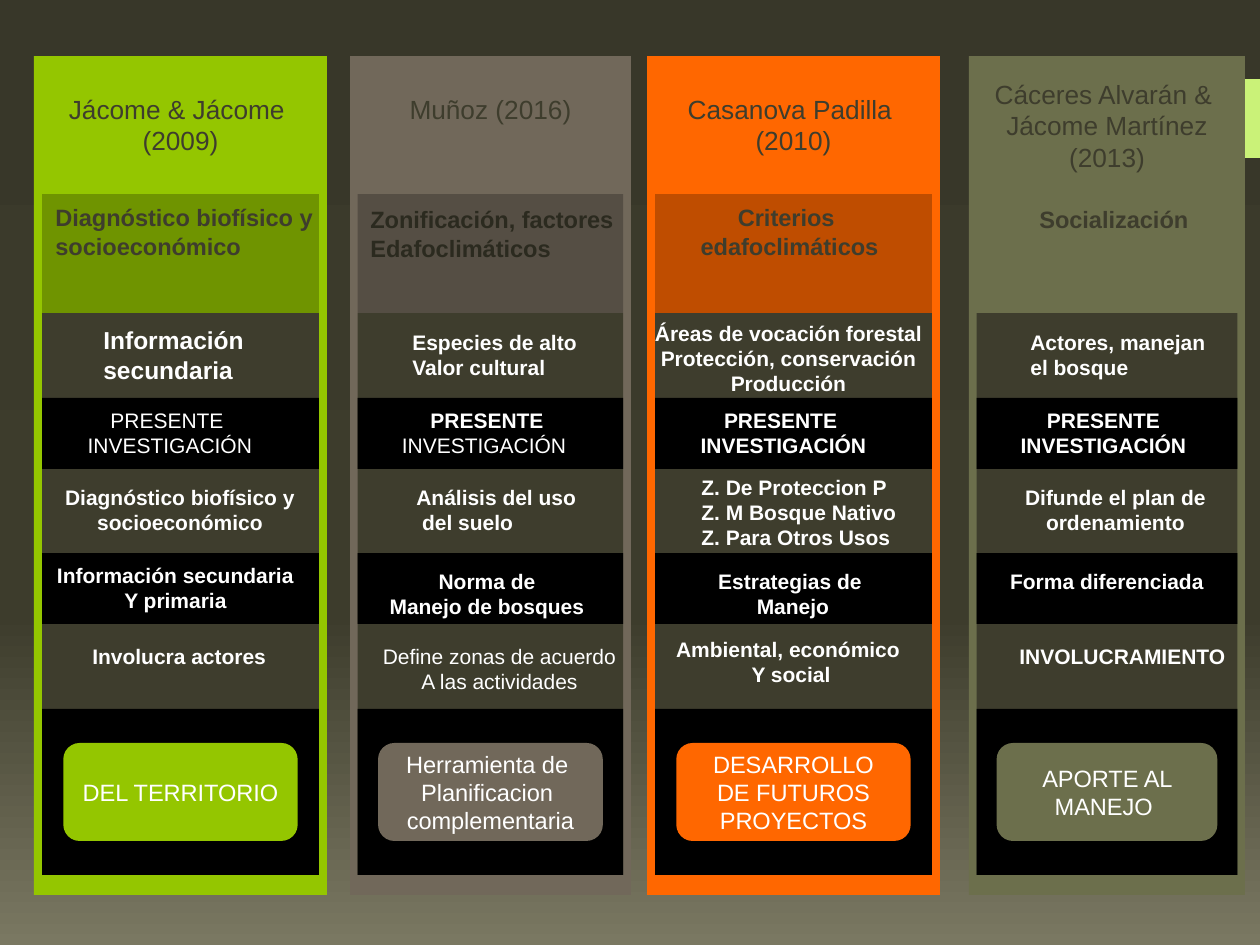
from copy import deepcopy
from dataclasses import dataclass

from pptx import Presentation
from pptx.dml.color import RGBColor
from pptx.enum.shapes import MSO_SHAPE
from pptx.enum.text import MSO_ANCHOR, MSO_AUTO_SIZE, PP_ALIGN
from pptx.util import Emu, Pt

PX_PER_INCH = 126
LEFT, CENTER = PP_ALIGN.LEFT, PP_ALIGN.CENTER


@dataclass(frozen=True)
class Theme:
    font: str = "Arial"
    background: tuple = ((0, "383729"), (0.65, "3D3C2C"), (1, "7A7862"))
    tab: str = "CAF278"
    body: str = "3E3D2D"
    band: str = "000000"
    dark_text: str = "3E3D2D"
    darker_text: str = "2B2A1F"
    light_text: str = "FFFFFF"
    author_size: float = 15
    topic_size: float = 13.5
    lead_size: float = 14
    row_size: float = 12


THEME = Theme()


@dataclass(frozen=True)
class Caption:
    left: int
    top: int
    width: int
    lines: tuple
    align: PP_ALIGN = CENTER
    size: float = THEME.row_size
    color: str = THEME.light_text
    plain: tuple = ()  # indexes of the lines that are not bold


@dataclass(frozen=True)
class Column:
    left: int
    width: int
    color: str
    topic_color: str
    button: tuple
    captions: tuple


def author(left, top, width, *lines):
    return Caption(left, top, width, lines, size=THEME.author_size,
                   color=THEME.dark_text, plain=tuple(range(len(lines))))


def topic(left, top, width, *lines, align=LEFT, color=THEME.dark_text):
    return Caption(left, top, width, lines, align, THEME.topic_size, color)


COLUMNS = (
    Column(34, 293, "94C600", "6F9400", ("DEL TERRITORIO",), (
        author(55, 87, 251, "Jácome & Jácome ", "(2009)"),
        topic(43, 197, 294, "Diagnóstico biofísico y", "socioeconómico"),
        Caption(91, 319, 174, ("Información", "secundaria"), LEFT, THEME.lead_size),
        Caption(74, 401, 192, ("PRESENTE ", "INVESTIGACIÓN"), plain=(0, 1)),
        Caption(51, 478, 258, ("Diagnóstico biofísico y", "socioeconómico")),
        Caption(43, 556, 265, ("Información secundaria", "Y primaria")),
        Caption(80, 637, 200, ("Involucra actores",), LEFT),
    )),
    Column(350, 281, "71685A", "554E44",
           ("Herramienta de ", "Planificacion ", "complementaria"), (
        author(396, 87, 189, "Muñoz (2016)"),
        topic(358, 199, 270, "Zonificación, factores", "Edafoclimáticos",
              color=THEME.darker_text),
        Caption(400, 323, 192, ("Especies de alto", "Valor cultural"), LEFT),
        Caption(388, 401, 198, ("PRESENTE", "INVESTIGACIÓN "), plain=(1,)),
        Caption(404, 478, 188, ("Análisis del uso", " del suelo"), LEFT),
        Caption(376, 562, 228, ("Norma de ", "Manejo de bosques ")),
        Caption(369, 637, 261, ("Define zonas de acuerdo", "A las actividades"),
                plain=(0, 1)),
    )),
    Column(647, 293, "FF6700", "BF4D00", ("DESARROLLO", "DE FUTUROS", "PROYECTOS"), (
        author(674, 87, 239, "Casanova Padilla ", "(2010)"),
        topic(687, 197, 205, "Criterios ", "edafoclimáticos", align=CENTER),
        Caption(641, 314, 295, ("Áreas de vocación forestal",
                                "Protección, conservación", "Producción")),
        Caption(687, 401, 193, ("PRESENTE ", "INVESTIGACIÓN")),
        Caption(689, 468, 223, ("Z. De Proteccion P", "Z. M Bosque Nativo",
                                "Z. Para Otros Usos"), LEFT),
        Caption(705, 562, 176, ("Estrategias de ", "Manejo")),
        Caption(662, 630, 258, ("Ambiental, económico ", "Y social")),
    )),
    Column(969, 276, "6C6F4C", "6C6F4C", ("APORTE AL MANEJO ",), (
        author(981, 72, 252, "Cáceres Alvarán & ", "Jácome Martínez", "(2013)"),
        topic(1027, 199, 176, "Socialización"),
        Caption(1018, 323, 202, ("Actores, manejan", "el bosque"), LEFT),
        Caption(1007, 401, 193, ("PRESENTE", "INVESTIGACIÓN")),
        Caption(1011, 478, 209, ("Difunde el plan de", "ordenamiento")),
        Caption(997, 562, 220, ("Forma diferenciada",)),
        Caption(1007, 637, 233, ("INVOLUCRAMIENTO",), LEFT),
    )),
)


def px(length):
    return Emu(round(length * 914400 / PX_PER_INCH))


def paint_background(slide):
    fill = slide.background.fill
    fill.gradient()
    fill.gradient_angle = 270
    stop_list = slide.element.xpath(".//a:gsLst")[0]
    stop_list.insert(1, deepcopy(stop_list[0]))
    for stop, (position, color) in zip(fill.gradient_stops, THEME.background):
        stop.position = position
        stop.color.rgb = RGBColor.from_string(color)


def add_box(shapes, left, top, width, height, color, kind=MSO_SHAPE.RECTANGLE):
    shape = shapes.add_shape(kind, px(left), px(top), px(width), px(height))
    shape.shadow.inherit = False
    shape.fill.solid()
    shape.fill.fore_color.rgb = RGBColor.from_string(color)
    shape.line.fill.background()
    return shape


def write_lines(text_frame, lines, size, color, align, plain):
    text_frame.text = "\n".join(lines)
    for index, paragraph in enumerate(text_frame.paragraphs):
        paragraph.alignment = align
        paragraph.font.name = THEME.font
        paragraph.font.size = Pt(size)
        paragraph.font.bold = index not in plain
        paragraph.font.color.rgb = RGBColor.from_string(color)


def add_caption(shapes, caption):
    height = 13 + len(caption.lines) * caption.size * 2.1
    box = shapes.add_textbox(px(caption.left), px(caption.top),
                             px(caption.width), px(height))
    text_frame = box.text_frame
    text_frame.word_wrap = False
    text_frame.auto_size = MSO_AUTO_SIZE.SHAPE_TO_FIT_TEXT
    write_lines(text_frame, caption.lines, caption.size, caption.color,
                caption.align, caption.plain)


def add_column(slide, column):
    shapes = slide.shapes.add_group_shape().shapes

    def add_centered(share, top, height, color, kind=MSO_SHAPE.RECTANGLE):
        width = column.width * share
        left = column.left + (column.width - width) / 2
        return add_box(shapes, left, top, width, height, color, kind)

    add_centered(1, 56, 839, column.color)
    for top, height, color in ((194, 119, column.topic_color),
                               (313, 562, THEME.body),
                               (398, 71, THEME.band),
                               (553, 71, THEME.band),
                               (709, 166, THEME.band)):
        add_centered(0.945, top, height, color)

    button = add_centered(0.8, 743, 98, column.color, MSO_SHAPE.ROUNDED_RECTANGLE)
    button.text_frame.word_wrap = True
    button.text_frame.vertical_anchor = MSO_ANCHOR.MIDDLE
    write_lines(button.text_frame, column.button, THEME.topic_size,
                THEME.light_text, CENTER, range(len(column.button)))

    for caption in column.captions:
        add_caption(shapes, caption)


def main():
    presentation = Presentation()
    presentation.slide_width = px(1260)
    presentation.slide_height = px(945)
    slide = presentation.slides.add_slide(presentation.slide_layouts[6])
    paint_background(slide)
    add_box(slide.shapes, 1181, 79, 79, 79, THEME.tab)
    for column in COLUMNS:
        add_column(slide, column)
    presentation.save("out.pptx")


if __name__ == "__main__":
    main()
